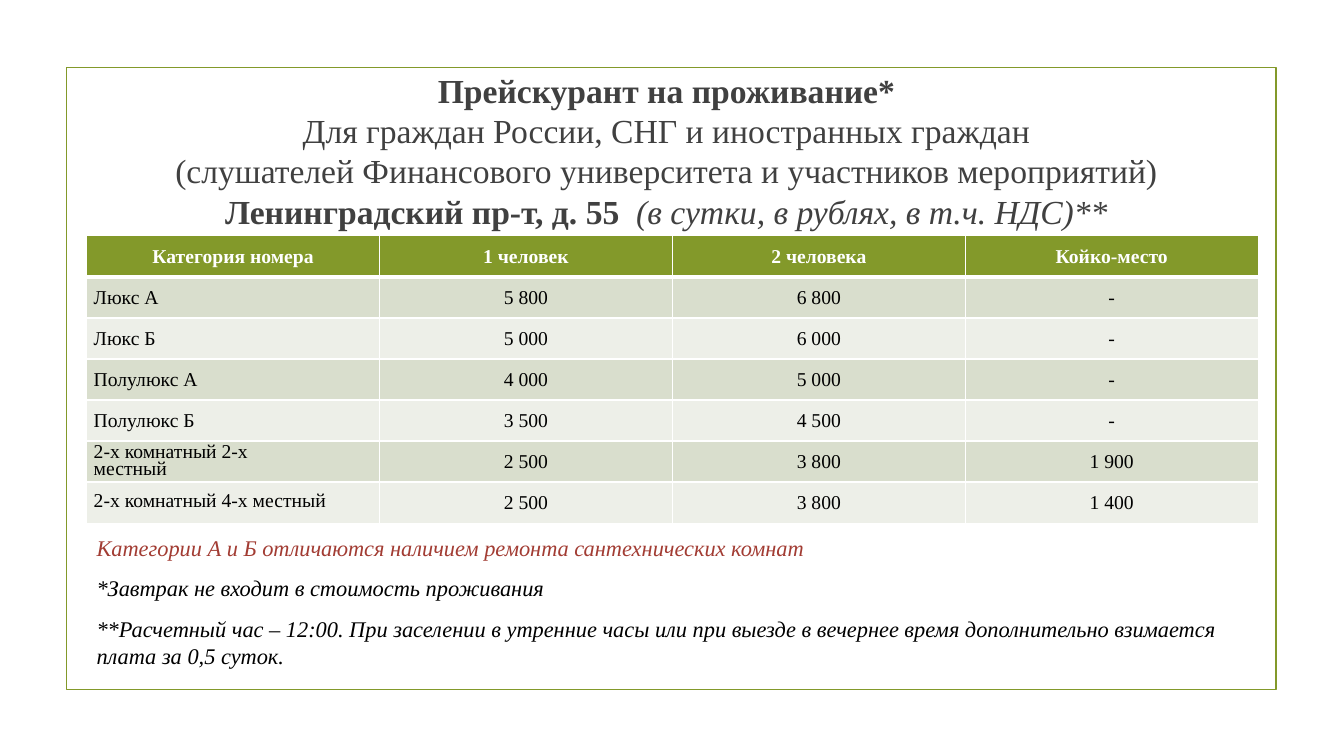
from lxml import etree
from pptx import Presentation
from pptx.dml.color import RGBColor
from pptx.enum.shapes import MSO_SHAPE as Preset
from pptx.enum.text import MSO_ANCHOR as Anchor, PP_ALIGN as Align
from pptx.oxml import parse_xml
from pptx.oxml.ns import nsdecls, qn
from pptx.util import Inches, Pt

GREEN, WHITE, BLACK, GREY, RED = "83992A", "FFFFFF", "000000", "404040", "A23C33"
BANDS = ["D9DECD", "EDEFE8"]


def color(value):
    return RGBColor.from_string(value)


def add_text(paragraph, text, size, ink, bold=False, italic=False):
    run = paragraph.add_run()
    run.text = text
    run.font.name = "Times New Roman"
    run.font.size = Pt(size)
    run.font.bold = bold
    run.font.italic = italic
    run.font.color.rgb = color(ink)


prs = Presentation()
prs.slide_width, prs.slide_height = Inches(13.33), Inches(7.5)
slide = prs.slides.add_slide(prs.slide_layouts[6])
shapes = slide.shapes

border = shapes.add_shape(Preset.RECTANGLE, Inches(0.66), Inches(0.67), Inches(12), Inches(6.17))
border.shadow.inherit = False
border.fill.background()
border.line.color.rgb = color(GREEN)
border.line.width = Pt(1.25)

heading = shapes.add_textbox(Inches(0.86), Inches(0.69), Inches(11.5), Inches(1.6)).text_frame
heading.word_wrap = True
heading.margin_top = heading.margin_bottom = 0
title = heading.paragraphs[0]
title.alignment = Align.CENTER
title.line_spacing = Pt(28.8)
for line, bold in [
    ("Прейскурант на проживание*", True),
    ("Для граждан России, СНГ и иностранных граждан", False),
    ("(слушателей Финансового университета и участников мероприятий)", False),
]:
    add_text(title, line, 24, GREY, bold)
    title.add_line_break()
add_text(title, "Ленинградский пр-т, д. 55 ", 24, GREY, bold=True)
add_text(title, " (в сутки, в рублях, в т.ч. НДС)**", 24, GREY, italic=True)

rates = [
    ["Категория номера", "1 человек", "2 человека", "Койко-место"],
    ["Люкс А", "5 800", "6 800", "-"],
    ["Люкс Б", "5 000", "6 000", "-"],
    ["Полулюкс А", "4 000", "5 000", "-"],
    ["Полулюкс Б", "3 500", "4 500", "-"],
    ["2-х комнатный 2-х\nместный", "2 500", "3 800", "1 900"],
    ["2-х комнатный 4-х местный", "2 500", "3 800", "1 400"],
]
price_list = shapes.add_table(
    len(rates), len(rates[0]), Inches(0.86), Inches(2.34), Inches(11.62), Inches(2.85)
).table
price_list.horz_banding = False
for r, rate in enumerate(rates):
    header = r == 0
    for c, entry in enumerate(rate):
        cell = price_list.cell(r, c)
        cell.vertical_anchor = Anchor.MIDDLE
        cell.margin_left = cell.margin_right = Inches(0.07)
        cell.margin_top = cell.margin_bottom = 0
        props = cell._tc.get_or_add_tcPr()
        for side in ["L", "R", "T", "B"]:
            thick = (header and side == "B") or (r == 1 and side == "T")
            edge = parse_xml(f'<a:ln{side} {nsdecls("a")} w="{Pt(3 if thick else 1)}"/>')
            paint = etree.SubElement(edge, qn("a:solidFill"))
            etree.SubElement(paint, qn("a:srgbClr"), val=WHITE)
            props.append(edge)
        cell.fill.solid()
        cell.fill.fore_color.rgb = color(GREEN if header else BANDS[(r - 1) % 2])
        for i, part in enumerate(entry.split("\n")):
            label = cell.text_frame.paragraphs[0] if i == 0 else cell.text_frame.add_paragraph()
            label.alignment = Align.CENTER if header or c else Align.LEFT
            if r >= 5 and c == 0:
                label.line_spacing = 0.8
            add_text(label, part, 14, WHITE if header else BLACK, bold=header)

footnotes = shapes.add_textbox(Inches(0.86), Inches(5.25), Inches(11.67), Inches(1.45)).text_frame
footnotes.word_wrap = True
for i, (note, ink) in enumerate([
    ("Категории А и Б отличаются наличием ремонта сантехнических комнат", RED),
    ("*Завтрак не входит в стоимость проживания", BLACK),
    ("**Расчетный час – 12:00. При заселении в утренние часы или при выезде в вечернее время "
     "дополнительно взимается плата за 0,5 суток.", BLACK),
]):
    footnote = footnotes.add_paragraph() if i else footnotes.paragraphs[0]
    footnote.line_spacing = Pt(19.2)
    if i:
        footnote.space_before = Pt(9.6)
    add_text(footnote, note, 16, ink, italic=True)

prs.save("out.pptx")
